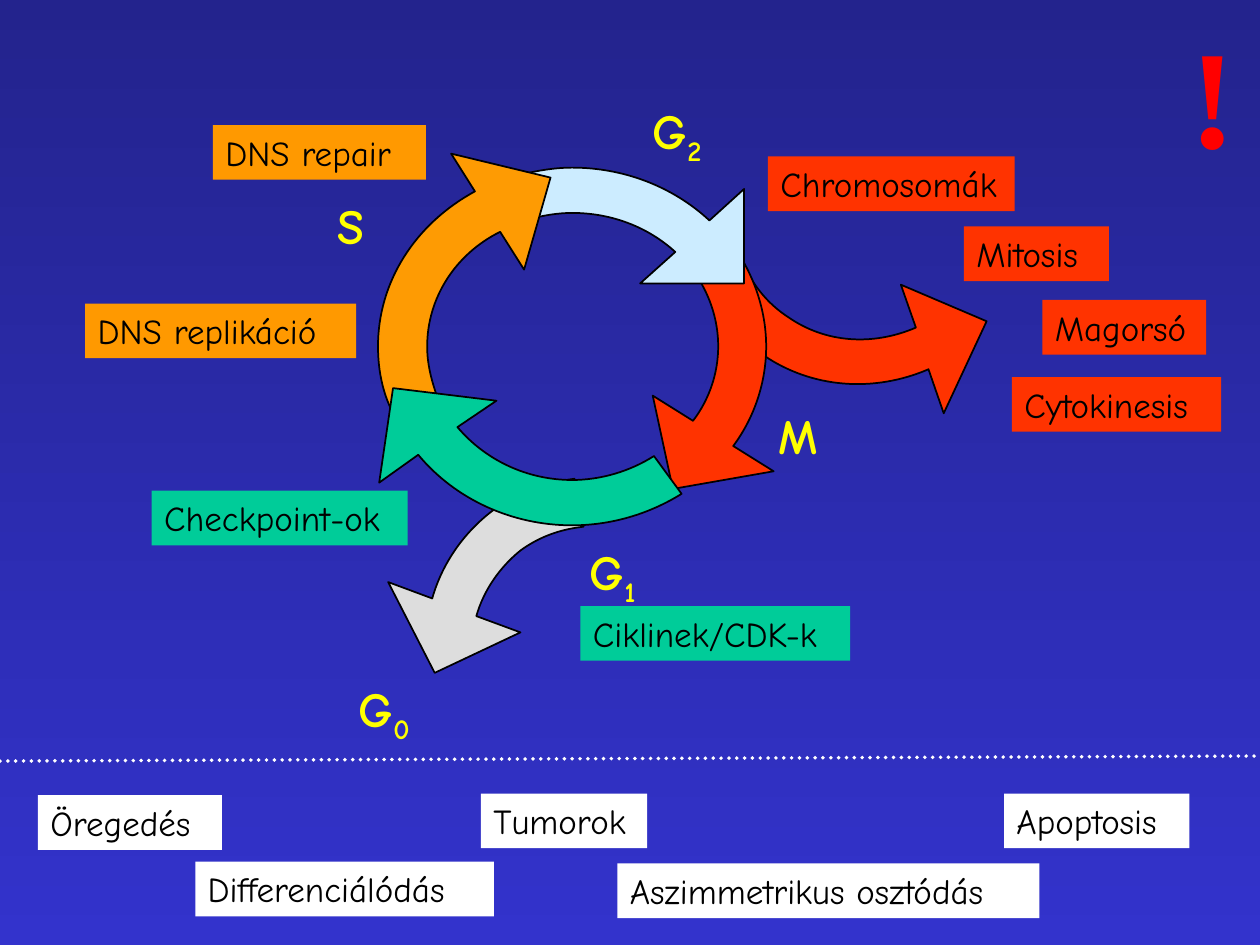
from math import cos, radians, sin

from lxml.etree import SubElement
from pptx import Presentation
from pptx.dml.color import RGBColor
from pptx.enum.dml import MSO_LINE
from pptx.enum.shapes import MSO_CONNECTOR, MSO_SHAPE
from pptx.enum.text import MSO_ANCHOR, MSO_AUTO_SIZE, PP_ALIGN
from pptx.oxml.ns import qn
from pptx.util import Pt

NAVY, BLUE = RGBColor(0x23, 0x23, 0x8D), RGBColor(0x33, 0x33, 0xCC)
GREY, ICE = RGBColor(0xDD, 0xDD, 0xDD), RGBColor(0xCC, 0xEC, 0xFF)
AMBER, ORANGE = RGBColor(0xFE, 0x9B, 0x03), RGBColor(0xFF, 0x99, 0x00)
SCARLET, GREEN = RGBColor(0xFF, 0x33, 0x00), RGBColor(0x00, 0xCC, 0x99)
YELLOW, RED = RGBColor(0xFF, 0xFF, 0x00), RGBColor(0xFF, 0x00, 0x00)
BLACK, WHITE = RGBColor(0, 0, 0), RGBColor(0xFF, 0xFF, 0xFF)

HAND, SERIF = "Comic Neue", "Times New Roman"
TERM_HEIGHT = 31.2

# Every arrow is a part of a full ring of this size
RING_WIDTH, RING_HEIGHT = 221.8, 203.8
CYCLE = (216, 95.8, 0)  # ring left, top, rotation
RESTING = (236.9, 279.4, 52.7)
DIVIDING = (387.4, 8.6, 303.7)

# Arrows, back to front: ring, colour, then the outline as seen on the slide.
# A pair is a corner; six numbers are a Bezier curve (two controls, end).
PHASE_ARROWS = [
    (RESTING, GREY, [
        (272.2, 352.1), (276.5, 337, 285.8, 324, 297.4, 314.6),
        (308.2, 306.7, 320.4, 302.4, 333.4, 301), (328.3, 273.6),
        (311, 275.8, 294.5, 282.2, 280.8, 292.3),
        (265, 304.6, 252.7, 321.8, 247, 342),
        (221.8, 332.6), (248.4, 384.5), (297.4, 361.4)]),
    (DIVIDING, SCARLET, [
        (523.4, 187.2), (498.2, 198, 471.6, 195.8, 450.7, 181.4),
        (438.5, 173.5, 429.1, 162, 424.1, 148.3), (401, 159.8),
        (408.2, 177.8, 420.5, 193, 436.3, 203),
        (463.7, 221.8, 499, 224.6, 530.6, 211),
        (539.3, 236.2), (563.8, 183.6), (514.8, 162.7)]),
    (CYCLE, SCARLET, [
        (396, 240.5), (405.4, 228.2, 410.4, 213.1, 410.4, 198),
        (410.4, 183.6, 406.1, 169.9, 398.2, 157.7), (421.9, 144.7),
        (432, 160.6, 437.8, 179.3, 437.8, 198),
        (437.8, 218.2, 431.3, 238.3, 419, 254.9),
        (442.1, 269.3), (384.5, 279.4), (373, 226.1)]),
    (CYCLE, ICE, [
        (385.9, 144), (370.1, 129.6, 349.2, 121.7, 326.9, 121.7),
        (319, 121.7, 310.3, 123.1, 302.4, 125.3), (293.8, 100.8),
        (304.6, 97.9, 316.1, 95.8, 326.9, 95.8),
        (356.4, 95.8, 384.5, 106.6, 405.4, 126),
        (425.2, 108), (425.2, 162), (365.8, 162)]),
    (CYCLE, AMBER, [
        (285.8, 132.5), (259.9, 145.4, 244.1, 170.6, 244.1, 198),
        (244.1, 207.4, 246.2, 216, 249.1, 224.6), (223.2, 233.3),
        (218.2, 222.5, 216, 210.2, 216, 198),
        (216, 161.3, 236.9, 128.2, 271.4, 109.4),
        (257.8, 87.8), (314.6, 101.5), (299.5, 154.1)]),
    (CYCLE, GREEN, [
        (261.4, 244.1), (277.2, 262.8, 301, 274.3, 326.9, 274.3),
        (343.4, 274.3, 360, 269.3, 373.7, 260.6), (389.5, 282.2),
        (370.8, 293.8, 349.2, 300.2, 326.9, 300.2),
        (292.3, 300.2, 259.9, 285.1, 239, 259.9),
        (216.7, 275.8), (224.6, 221.8), (283.7, 229)]),
]

# Phase names: letter, subscript, left, top, width
PHASE_NAMES = [
    ("S", "", 186, 108, 36),
    ("G", "2", 366, 54, 45.4),
    ("G", "1", 330, 306, 45.4),
    ("M", "", 438, 228, 39.6),
    ("G", "0", 198, 384, 45.4),
]

# Terms by colour: text, left, top, width
TERMS = [
    (ORANGE, [("DNS replikáció", 48.7, 173.5, 154.8),
              ("DNS repair", 121.7, 71.5, 121.7)]),
    (GREEN, [("Ciklinek/CDK-k", 331.7, 346.3, 154.1),
             ("Checkpoint-ok", 86.7, 280.4, 146.2)]),
    (SCARLET, [("Chromosomák", 438.8, 89.4, 141.1),
               ("Mitosis", 550.8, 129.4, 82.8),
               ("Magorsó", 595.7, 171.4, 93.6),
               ("Cytokinesis", 578.3, 215.5, 119.5)]),
    (WHITE, [("Öregedés", 21.7, 454.4, 105.1),
             ("Differenciálódás", 111.6, 492.4, 170.7),
             ("Tumorok", 274.8, 453.5, 95),
             ("Apoptosis", 573.8, 453.5, 105.9),
             ("Aszimmetrikus osztódás", 352.8, 493.4, 241.2)]),
]


def draw_arrow(ring, color, outline):
    left, top, rotation = ring
    right, bottom = left + RING_WIDTH, top + RING_HEIGHT
    builder = shapes.build_freeform(Pt(left), Pt(top))
    builder.add_line_segments([(Pt(x), Pt(y)) for x, y in
                               ((right, top), (right, bottom), (left, bottom))])
    arrow = builder.convert_to_shape()

    # Corners and curves, turned back into the ring's own frame
    angle = radians(-rotation)
    middle_x, middle_y = (left + right) / 2, (top + bottom) / 2
    path = next(arrow._element.iter(qn("a:path")))
    for child in list(path):
        path.remove(child)
    for index, part in enumerate(outline):
        tag = "a:cubicBezTo" if len(part) == 6 else "a:lnTo" if index else "a:moveTo"
        segment = SubElement(path, qn(tag))
        for x, y in zip(part[::2], part[1::2]):
            dx, dy = x - middle_x, y - middle_y
            local_x = dx * cos(angle) - dy * sin(angle) + RING_WIDTH / 2
            local_y = dx * sin(angle) + dy * cos(angle) + RING_HEIGHT / 2
            SubElement(segment, qn("a:pt"), x=str(Pt(local_x)), y=str(Pt(local_y)))
    SubElement(path, qn("a:close"))

    arrow.rotation = rotation
    paint(arrow, color)
    arrow.line.color.rgb = BLACK
    arrow.line.width = Pt(1)


def write(shape, text, size, color, font=HAND, bold=False, subscript=""):
    frame = shape.text_frame
    frame.word_wrap = True
    frame.auto_size = MSO_AUTO_SIZE.SHAPE_TO_FIT_TEXT
    frame.vertical_anchor = MSO_ANCHOR.TOP
    paragraph = frame.paragraphs[0]
    paragraph.alignment = PP_ALIGN.LEFT
    for content in filter(None, (text, subscript)):
        run = paragraph.add_run()
        run.text = content
        run.font.name, run.font.size, run.font.bold = font, Pt(size), bold
        run.font.color.rgb = color
    if subscript:
        run.font._element.set("baseline", "-25000")


def paint(shape, color):
    shape.shadow.inherit = False
    shape.fill.solid()
    shape.fill.fore_color.rgb = color


deck = Presentation()
deck.slide_width, deck.slide_height = Pt(720), Pt(540)
slide = deck.slides.add_slide(deck.slide_layouts[6])
shapes = slide.shapes

# Background
backdrop = slide.background.fill
backdrop.gradient()
backdrop.gradient_angle = 270
for stop, color in zip(backdrop.gradient_stops, (NAVY, BLUE)):
    stop.color.rgb = color

# Cell cycle arrows
for ring, color, outline in PHASE_ARROWS:
    draw_arrow(ring, color, outline)

# Phase names
for letter, subscript, left, top, width in PHASE_NAMES:
    phase = shapes.add_textbox(Pt(left), Pt(top), Pt(width), Pt(41))
    write(phase, letter, 28, YELLOW, bold=True, subscript=subscript)

# Terms
for color, entries in TERMS:
    for text, left, top, width in entries:
        term = shapes.add_shape(MSO_SHAPE.RECTANGLE, Pt(left), Pt(top),
                                Pt(width), Pt(TERM_HEIGHT))
        paint(term, color)
        term.line.fill.background()
        write(term, text, 20, BLACK)

# Dotted divider
divider = shapes.add_connector(MSO_CONNECTOR.STRAIGHT, Pt(0), Pt(434.9), Pt(720), Pt(432))
divider.line.color.rgb = WHITE
divider.line.width = Pt(2.25)
divider.line.dash_style = MSO_LINE.ROUND_DOT
divider._element.spPr.find(qn("a:ln")).set("cap", "rnd")
SubElement(divider._element.spPr, qn("a:effectLst"))

# Exclamation mark
alert = shapes.add_textbox(Pt(672.8), Pt(1.4), Pt(41.8), Pt(104.4))
write(alert, "!", 80, RED, font=SERIF, bold=True)

deck.save("out.pptx")
